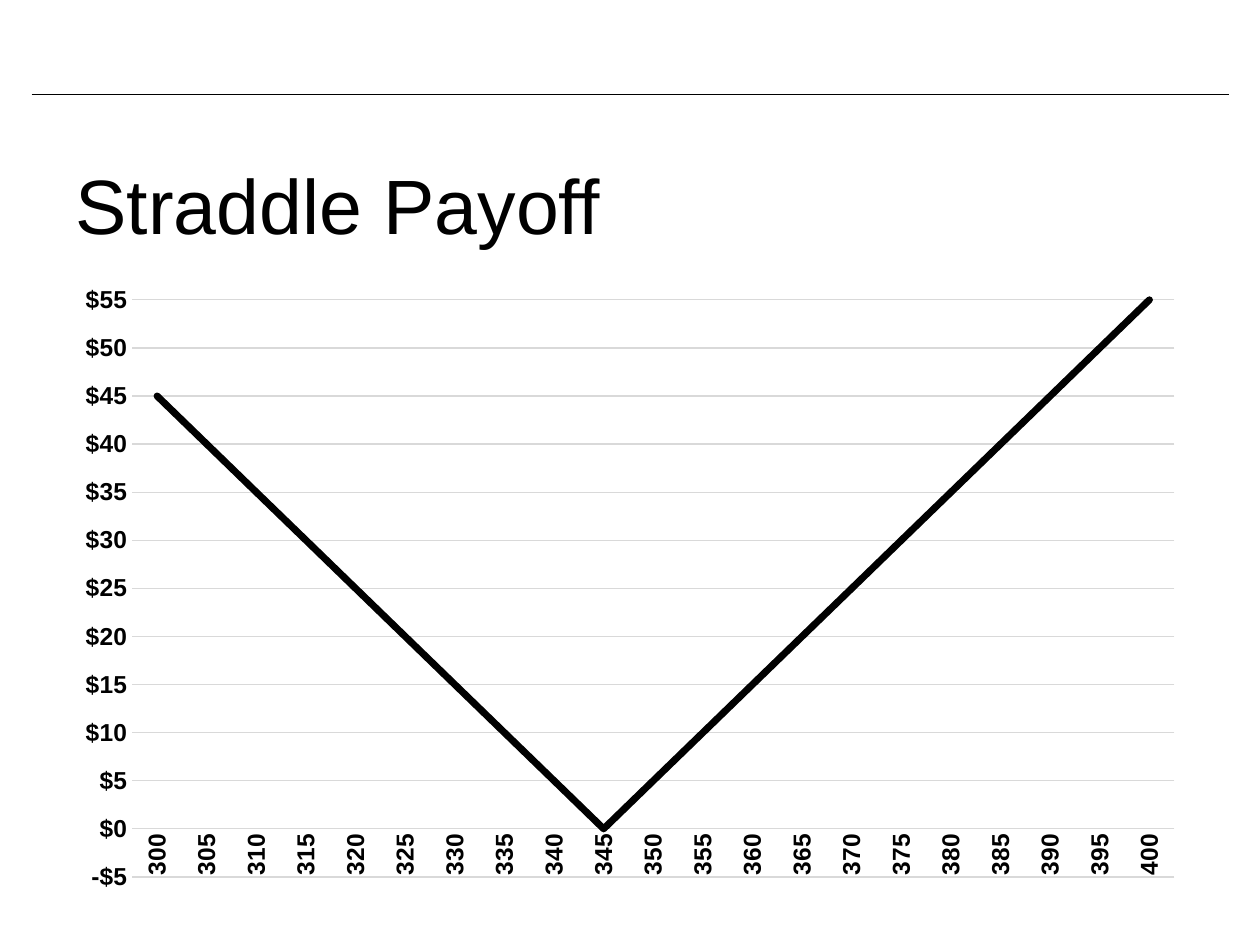
from dataclasses import dataclass

from pptx import Presentation
from pptx.chart.data import CategoryChartData
from pptx.dml.color import RGBColor
from pptx.enum.chart import XL_CHART_TYPE as ChartType, XL_TICK_MARK as Tick
from pptx.enum.shapes import MSO_CONNECTOR as Connector
from pptx.enum.text import MSO_ANCHOR as Anchor, PP_ALIGN as Align
from pptx.oxml.ns import qn
from pptx.util import Inches, Pt
from lxml import etree


@dataclass(frozen=True)
class Theme:
    font: str = "Arial"
    ink: RGBColor = RGBColor(0x00, 0x00, 0x00)
    grid: RGBColor = RGBColor(0xD9, 0xD9, 0xD9)
    title_size: int = 44
    label_size: int = 14
    rule_width: float = 1
    grid_width: float = 0.75
    payoff_width: float = 4


class SlideBuilder:
    def __init__(self, slide, theme):
        self.s = slide
        self.theme = theme

    def style_font(self, font, size, bold=False):
        font.name = self.theme.font
        font.size = Pt(size)
        font.bold = bold
        font.color.rgb = self.theme.ink

    def style_line(self, line, color, width):
        line.color.rgb = color
        line.width = Pt(width)

    def rule(self, left, right, top):
        c = self.s.shapes.add_connector(
            Connector.STRAIGHT, Inches(left), Inches(top), Inches(right), Inches(top))
        self.style_line(c.line, self.theme.ink, self.theme.rule_width)
        etree.SubElement(c.element.spPr, qn("a:effectLst"))

    def title(self, text, left, top, width, height):
        sp = self.s.shapes.title
        sp.left, sp.top = Inches(left), Inches(top)
        sp.width, sp.height = Inches(width), Inches(height)
        tf = sp.text_frame
        tf.word_wrap = True
        tf.vertical_anchor = Anchor.MIDDLE
        p = tf.paragraphs[0]
        p.alignment = Align.LEFT
        r = p.add_run()
        r.text = text
        self.style_font(r.font, self.theme.title_size)

    def line_chart(self, categories, name, values, left, top, width, height):
        data = CategoryChartData()
        data.categories = categories
        data.add_series(name, values)
        chart = self.s.shapes.add_chart(
            ChartType.LINE, Inches(left), Inches(top),
            Inches(width), Inches(height), data).chart
        chart.has_legend = False
        chart.has_title = False
        self.style_font(chart.font, self.theme.label_size, bold=True)

        plot = chart.plots[0]
        plot.vary_by_categories = False
        series = plot.series[0]
        series.smooth = False
        line = series.format.line
        self.style_line(line, self.theme.ink, self.theme.payoff_width)
        series.format.line.fill  # the line element exists from here on
        series._element.find(f"{qn('c:spPr')}/{qn('a:ln')}").set("cap", "rnd")

        for axis in (chart.category_axis, chart.value_axis):
            axis.major_tick_mark = axis.minor_tick_mark = Tick.NONE
            self.style_font(axis.tick_labels.font, self.theme.label_size, bold=True)
        return chart

    def category_axis(self, axis, rotation):
        self.style_line(axis.format.line, self.theme.grid, self.theme.grid_width)
        body = axis._element.find(f"{qn('c:txPr')}/{qn('a:bodyPr')}")
        body.set("rot", str(rotation * 60000))
        body.set("vert", "horz")

    def value_axis(self, axis, low, high, step, number_format):
        axis.minimum_scale, axis.maximum_scale = low, high
        axis.major_unit = step
        axis.tick_labels.number_format = number_format
        axis.tick_labels.number_format_is_linked = False
        axis.format.line.fill.background()
        axis.has_major_gridlines = True
        self.style_line(axis.major_gridlines.format.line,
                        self.theme.grid, self.theme.grid_width)


def main():
    prs = Presentation()
    prs.slide_width, prs.slide_height = Inches(10), Inches(7.5)
    s = prs.slides.add_slide(prs.slide_layouts.get_by_name("Title Only"))
    builder = SlideBuilder(s, Theme())

    # Header rule and title
    builder.rule(0.25, 9.75, 0.75)
    builder.title("Straddle Payoff", 0.5, 1.08, 9, 1.08)

    # Payoff is the distance of the price from the strike
    strike = 345
    prices = range(300, 401, 5)
    payoffs = [abs(price - strike) for price in prices]
    chart = builder.line_chart([str(price) for price in prices], "Series 1",
                               payoffs, 0.5, 2.17, 9, 5)
    builder.category_axis(chart.category_axis, rotation=-90)
    builder.value_axis(chart.value_axis, -5, 55, 5, '"$"#,##0')

    prs.save("out.pptx")


if __name__ == "__main__":
    main()
